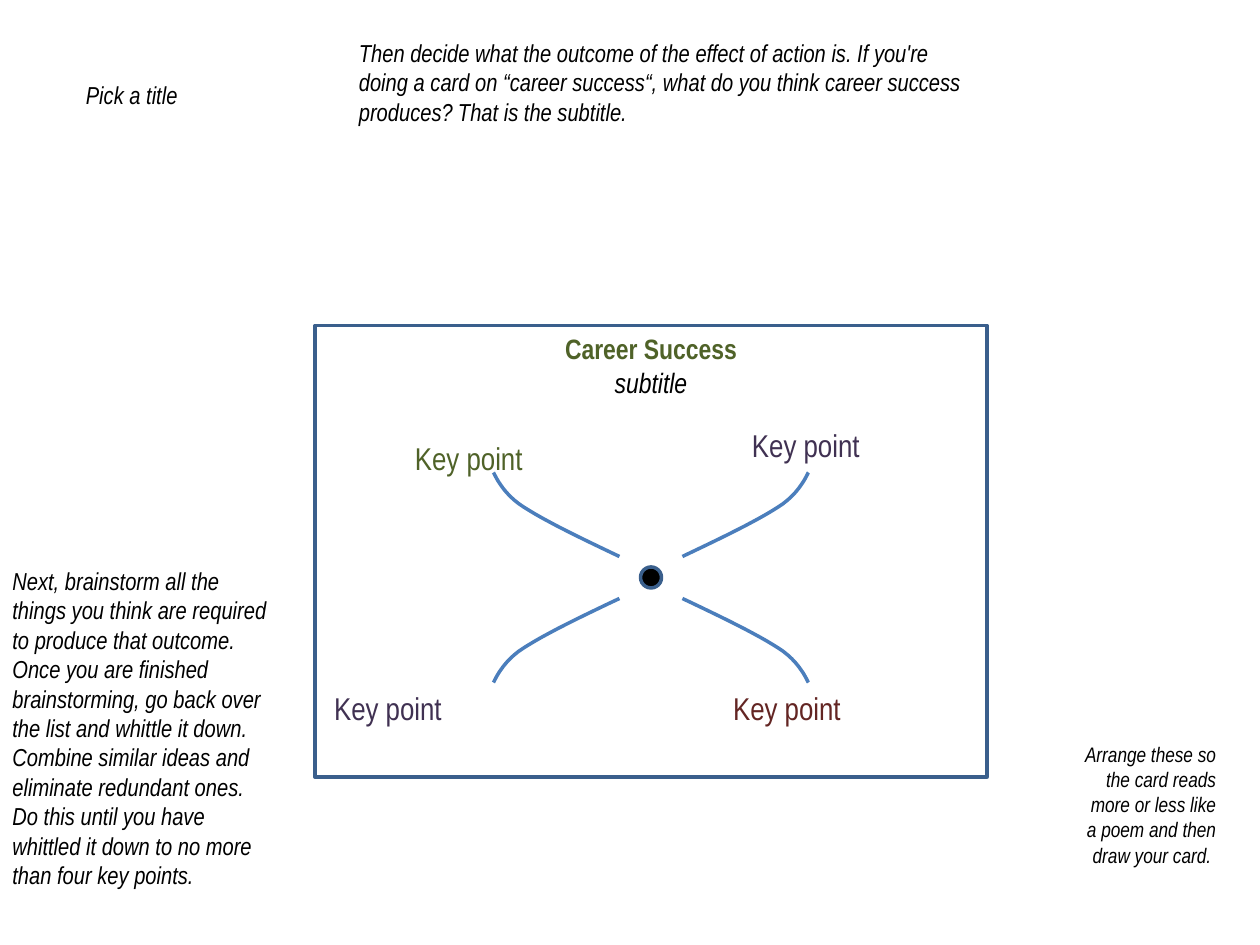
from itertools import product

from pptx import Presentation
from pptx import util as u
from pptx.dml.color import RGBColor
from pptx.enum import shapes, text

PX = 7620  # EMU per px, 120 px to the inch
FONT = "Arial Narrow"
BLACK = RGBColor(0x00, 0x00, 0x00)
WHITE = RGBColor(0xFF, 0xFF, 0xFF)
BORDER = RGBColor(0x3A, 0x5F, 0x8C)
BRANCH = RGBColor(0x4B, 0x7E, 0xBC)
GREEN = RGBColor(0x4F, 0x62, 0x28)
PURPLE = RGBColor(0x40, 0x31, 0x52)
RED = RGBColor(0x63, 0x25, 0x23)
LEFT, CENTER, RIGHT = (text.PP_ALIGN.LEFT, text.PP_ALIGN.CENTER,
                       text.PP_ALIGN.RIGHT)


def bezier(points, steps=12):
    """Points along a cubic curve, without its start."""
    for step in range(1, steps + 1):
        t = step / steps
        weights = ((1 - t) ** 3, 3 * t * (1 - t) ** 2,
                   3 * t * t * (1 - t), t ** 3)
        yield tuple(sum(w * p[axis] for w, p in zip(weights, points))
                    for axis in (0, 1))


class CardSlide:
    def __init__(self, slide):
        self.slide = slide

    def wording(self, paragraph, words, align, size, color, **formats):
        paragraph.alignment = align
        run = paragraph.add_run()
        run.text = words
        run.font.color.rgb = color
        formats = {"name": FONT, "size": u.Pt(size), **formats}
        for name, value in formats.items():
            setattr(run.font, name, value)

    def outline(self, shape, color):
        shape.shadow.inherit = False
        shape.line.color.rgb = color
        shape.line.width = u.Pt(2)

    def shape(self, kind, box, fill):
        shape = self.slide.shapes.add_shape(kind, *(n * PX for n in box))
        shape.fill.solid()
        shape.fill.fore_color.rgb = fill
        self.outline(shape, BORDER)
        return shape

    def curve(self, points):
        points = [(x * PX, y * PX) for x, y in points]
        builder = self.slide.shapes.build_freeform(*points[0])
        builder.add_line_segments(points[1:], close=False)
        branch = builder.convert_to_shape()
        branch.fill.background()
        self.outline(branch, BRANCH)

    def label(self, words, box, size, color=BLACK, align=LEFT, wrap=True,
              **formats):
        label = self.slide.shapes.add_textbox(*(n * PX for n in box))
        frame = label.text_frame
        frame.word_wrap = wrap
        frame.auto_size = text.MSO_AUTO_SIZE.SHAPE_TO_FIT_TEXT
        self.wording(frame.paragraphs[0], words, align, size, color, **formats)


def main():
    deck = Presentation()
    deck.slide_width, deck.slide_height = 1200 * PX, 900 * PX
    page = CardSlide(deck.slides.add_slide(deck.slide_layouts[6]))

    # Card with title and subtitle
    card = page.shape(shapes.MSO_SHAPE.RECTANGLE, (300, 310, 640, 430), WHITE)
    heading = card.text_frame
    heading.vertical_anchor = text.MSO_ANCHOR.TOP
    page.wording(heading.paragraphs[0], "Career Success", CENTER, 16, GREEN,
                 bold=True)
    page.wording(heading.add_paragraph(), "subtitle", CENTER, 16, BLACK,
                 italic=True)

    # Hub and four mirrored branches
    hub_x, hub_y, radius = 620, 550, 10
    page.shape(shapes.MSO_SHAPE.OVAL,
               (hub_x - radius, hub_y - radius, 2 * radius, 2 * radius), BLACK)
    inner = [(30, 20), (66, 37), (101, 54), (121, 67)]
    outer = [(121, 67), (142, 80), (149, 99), (150, 100)]
    arm = [inner[0], *bezier(inner), *bezier(outer)]
    for side_y, side_x in product((1, -1), repeat=2):
        page.curve([(hub_x + side_x * x, hub_y + side_y * y) for x, y in arm])

    # Key points
    for x, y, color in ((698, 400, PURPLE), (680, 650, RED),
                        (300, 650, PURPLE), (377, 412, GREEN)):
        page.label("Key point", (x, y, 139, 48), 18, color, CENTER, wrap=False)

    # Instructions around the card
    page.label("Pick a title", (70, 70, 113, 41), 14, wrap=False, italic=True)
    page.label("Then decide what the outcome of the effect of action is. "
               "If you're doing a card on “career success“, what do you think "
               "career success produces? That is the subtitle.",
               (330, 30, 600, 97), 14, italic=True)
    page.label("Next, brainstorm all the things you think are required to "
               "produce that outcome. Once you are finished brainstorming, go "
               "back over the list and whittle it down. Combine similar ideas "
               "and eliminate redundant ones. Do this until you have whittled "
               "it down to no more than four key points.",
               (0, 533, 270, 323), 14, italic=True)
    page.label("Arrange these so the card reads more or less like a poem and "
               "then draw your card. ",
               (1020, 700, 150, 133), 12, align=RIGHT, italic=True)

    deck.save("out.pptx")


if __name__ == "__main__":
    main()
